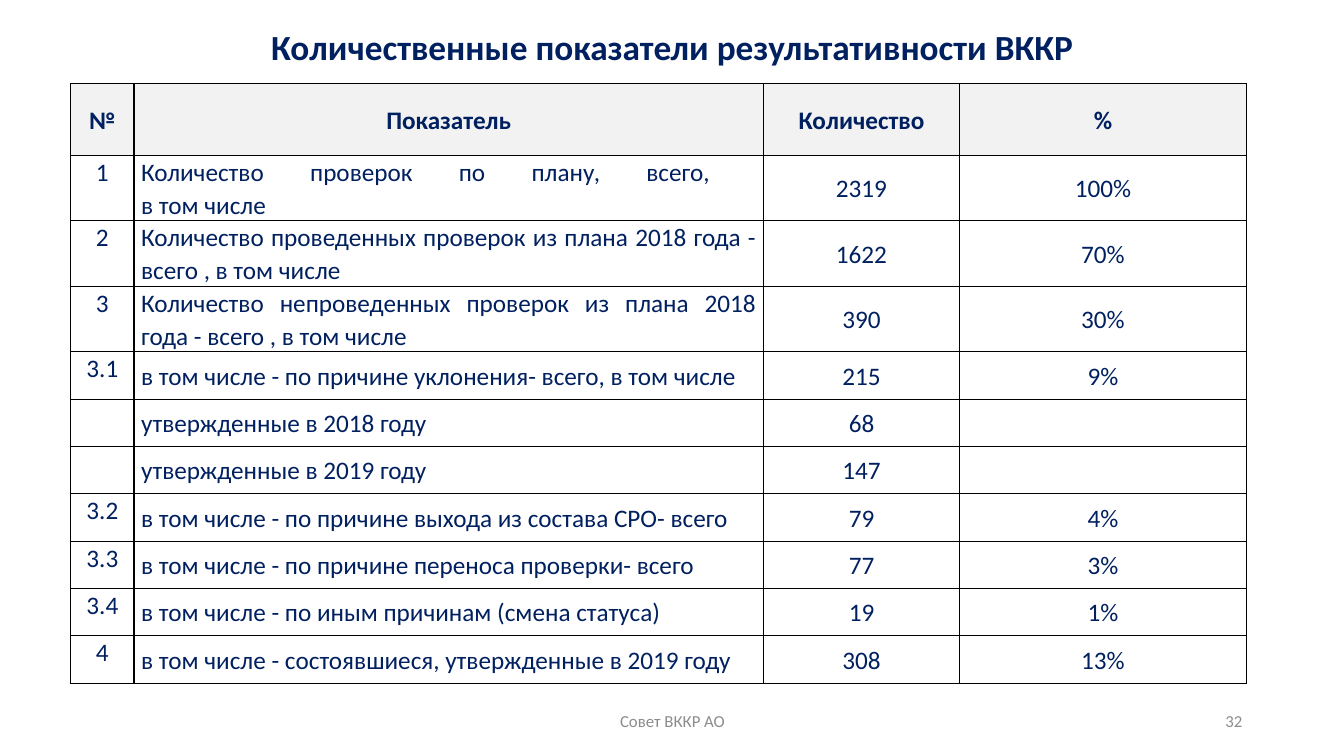
from lxml import etree
from pptx import Presentation
from pptx.dml.color import RGBColor
from pptx.enum.text import MSO_ANCHOR, PP_ALIGN
from pptx.oxml.ns import qn
from pptx.util import Inches, Pt

CENTER, RIGHT, JUSTIFY = PP_ALIGN.CENTER, PP_ALIGN.RIGHT, PP_ALIGN.JUSTIFY
TOP, MIDDLE = MSO_ANCHOR.TOP, MSO_ANCHOR.MIDDLE

NAVY = RGBColor(0x00, 0x20, 0x60)
GREY = RGBColor(0x8C, 0x8C, 0x8C)
HEADER_FILL = RGBColor(0xF2, 0xF2, 0xF2)
BORDER = RGBColor(0x00, 0x00, 0x00)

COLUMN_WIDTHS = [0.63, 6.24, 1.95, 2.84]
ROW_HEIGHTS = [0.71] + [0.65] * 3 + [0.47] * 7
COLUMN_ALIGNS = [CENTER, JUSTIFY, CENTER, CENTER]
COLUMN_ANCHORS = [TOP, MIDDLE, MIDDLE, MIDDLE]

INDICATORS = [
    ("№", "Показатель", "Количество", "%"),
    ("1", "Количество проверок по плану, всего, \nв том числе", "2319", "100%"),
    ("2", "Количество проведенных проверок из плана 2018 года - всего , в том числе", "1622", "70%"),
    ("3", "Количество непроведенных проверок из плана 2018 года - всего , в том числе", "390", "30%"),
    ("3.1", "в том числе - по причине уклонения- всего, в том числе", "215", "9%"),
    ("", "утвержденные в 2018 году", "68", ""),
    ("", "утвержденные в 2019 году", "147", ""),
    ("3.2", "в том числе - по причине выхода из состава СРО- всего", "79", "4%"),
    ("3.3", "в том числе - по причине переноса проверки- всего", "77", "3%"),
    ("3.4", "в том числе - по иным причинам (смена статуса)", "19", "1%"),
    ("4", "в том числе - состоявшиеся, утвержденные в 2019 году", "308", "13%"),
]


class SlideBuilder:
    def __init__(self, slide, font="Calibri"):
        self.slide = slide
        self.font = font

    def fill_paragraph(self, paragraph, text, size, color, align, bold=False, spacing=1.0):
        """Add the text run by run, with a line break at each newline."""
        paragraph.alignment = align
        paragraph.line_spacing = spacing
        for number, line in enumerate(text.split("\n")):
            if number:
                paragraph.add_line_break()
            run = paragraph.add_run()
            run.text = line
            run.font.name = self.font
            run.font.size = Pt(size)
            run.font.bold = bold
            run.font.color.rgb = color

    def text(self, left, top, width, height, text, size, color, align, **style):
        box = self.slide.shapes.add_textbox(
            Inches(left), Inches(top), Inches(width), Inches(height))
        box.text_frame.word_wrap = True
        box.text_frame.vertical_anchor = MIDDLE
        self.fill_paragraph(box.text_frame.paragraphs[0], text, size, color, align, **style)

    def border(self, cell):
        properties = cell._tc.get_or_add_tcPr()
        for side in ("a:lnL", "a:lnR", "a:lnT", "a:lnB"):
            line = etree.SubElement(properties, qn(side), w=str(Pt(1)))
            fill = etree.SubElement(line, qn("a:solidFill"))
            etree.SubElement(fill, qn("a:srgbClr"), val=str(BORDER))

    def cell(self, cell, text, align, anchor, header):
        cell.margin_left = cell.margin_right = Inches(0.07)
        cell.margin_top = cell.margin_bottom = 0
        cell.vertical_anchor = anchor
        self.border(cell)
        if header:
            cell.fill.solid()
            cell.fill.fore_color.rgb = HEADER_FILL
        else:
            cell.fill.background()
        if text:
            self.fill_paragraph(cell.text_frame.paragraphs[0], text, 18, NAVY, align,
                                bold=header, spacing=1.07)

    def table(self, left, top, rows):
        table = self.slide.shapes.add_table(
            len(rows), len(COLUMN_WIDTHS), Inches(left), Inches(top),
            Inches(sum(COLUMN_WIDTHS)), Inches(sum(ROW_HEIGHTS))).table
        table.first_row = table.horz_banding = False
        for column, width in zip(table.columns, COLUMN_WIDTHS):
            column.width = Inches(width)
        for row, height in zip(table.rows, ROW_HEIGHTS):
            row.height = Inches(height)
        for r, values in enumerate(rows):
            header = r == 0
            for c, value in enumerate(values):
                align = CENTER if header else COLUMN_ALIGNS[c]
                anchor = MIDDLE if header else COLUMN_ANCHORS[c]
                self.cell(table.cell(r, c), value, align, anchor, header)


def main():
    deck = Presentation()
    deck.slide_width, deck.slide_height = Inches(13.33), Inches(7.5)
    builder = SlideBuilder(deck.slides.add_slide(deck.slide_layouts[6]))
    builder.text(0.92, 0.25, 11.5, 0.47, "Количественные показатели результативности ВККР",
                 25.2, NAVY, CENTER, bold=True, spacing=0.9)
    builder.table(0.7, 0.83, INDICATORS)
    builder.text(4.42, 6.95, 4.5, 0.4, "Совет ВККР АО", 12, GREY, CENTER)
    builder.text(9.42, 6.95, 3, 0.4, "32", 12, GREY, RIGHT)
    deck.save("out.pptx")


if __name__ == "__main__":
    main()
